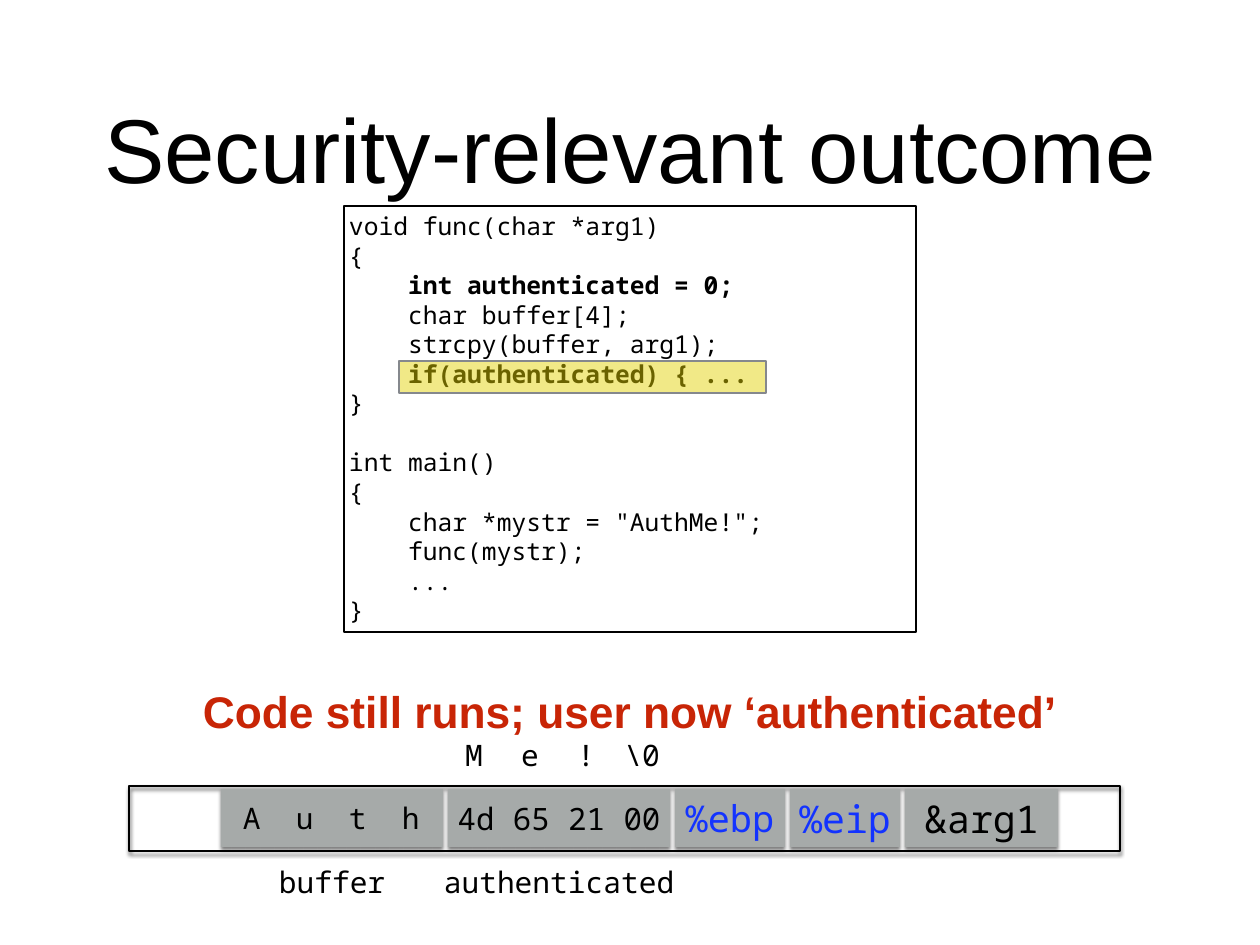
from lxml.etree import SubElement
from pptx import Presentation
from pptx.dml.color import RGBColor
from pptx.enum.shapes import MSO_SHAPE
from pptx.enum.text import MSO_ANCHOR, PP_ALIGN
from pptx.oxml.ns import qn
from pptx.util import Pt

PX = 10320
BLACK = RGBColor(0x00, 0x00, 0x00)
GREY = RGBColor(0xA6, 0xAA, 0xA9)
EDGE = RGBColor(0x85, 0x88, 0x8D)
BLUE = RGBColor(0x13, 0x33, 0xFF)
RED = RGBColor(0xC8, 0x25, 0x06)
YELLOW = RGBColor(0xE3, 0xD1, 0x01)
MONO = "Noto Sans Mono"

CODE = """void func(char *arg1)
{
    int authenticated = 0;
    char buffer[4];
    strcpy(buffer, arg1);
    if(authenticated) { ...
}

int main()
{
    char *mystr = "AuthMe!";
    func(mystr);
    ...
}"""

deck = Presentation()
deck.slide_width, deck.slide_height = 1260 * PX, 945 * PX
slide = deck.slides.add_slide(deck.slide_layouts[6])


def write(shape, text, size, font=MONO, color=BLACK, bold=(),
          align=PP_ALIGN.CENTER, anchor=MSO_ANCHOR.MIDDLE, wrap=True):
    """Fill a shape with one paragraph per line; bold holds line numbers."""
    frame = shape.text_frame
    frame.word_wrap = wrap
    frame.vertical_anchor = anchor
    frame.margin_left = frame.margin_right = 5 * PX
    frame.margin_top = frame.margin_bottom = 5 * PX
    for i, line in enumerate(text.split("\n")):
        par = frame.add_paragraph() if i else frame.paragraphs[0]
        par.alignment = align
        run = par.add_run()
        run.text = line
        run.font.name = font
        run.font.size = Pt(size)
        run.font.bold = i in bold
        run.font.color.rgb = color


def rect(x, y, w, h, fill=None, line=None, shadow=False):
    shape = slide.shapes.add_shape(
        MSO_SHAPE.RECTANGLE, x * PX, y * PX, w * PX, h * PX)
    shape.shadow.inherit = False
    if fill is None:
        shape.fill.background()
    else:
        shape.fill.solid()
        shape.fill.fore_color.rgb = fill
    if line is None:
        shape.line.fill.background()
    else:
        shape.line.color.rgb = line
        shape.line.width = Pt(2)
    if shadow:
        effects = shape.element.spPr.find(qn("a:effectLst"))
        cast = SubElement(effects, qn("a:outerShdw"), blurRad=str(Pt(3)),
                          dist=str(Pt(2)), dir="5400000", rotWithShape="0")
        tint = SubElement(cast, qn("a:srgbClr"), val=str(BLACK))
        SubElement(tint, qn("a:alpha"), val="50000")
    return shape


title = slide.shapes.add_textbox(92 * PX, 43 * PX, 1076 * PX, 209 * PX)
write(title, "Security-relevant outcome", 73.6, font="Arial")

code = rect(344, 206, 572, 426, line=BLACK)
write(code, CODE, 20, bold=(2, 5), align=PP_ALIGN.LEFT, anchor=MSO_ANCHOR.TOP)

# Stack memory: cells from left to right, with names below
rect(129, 786, 991, 65, line=BLACK, shadow=True)
left = 221
for text, width, size, color, name in (
    ("A\tu\tt\th", 222, 24, BLACK, "buffer"),
    ("4d 65 21 00", 222, 25, BLACK, "authenticated"),
    ("%ebp", 110, 30, BLUE, None),
    ("%eip", 110, 31, BLUE, None),
    ("&arg1", 153, 31, BLACK, None),
):
    cell = rect(left, 789, width, 58, fill=GREY, shadow=True)
    tabbed = "\t" in text
    write(cell, text, size, color=color,
          align=PP_ALIGN.LEFT if tabbed else PP_ALIGN.CENTER)
    if tabbed:
        cell.text_frame.margin_left = 22 * PX
        props = cell.text_frame.paragraphs[0]._p.get_or_add_pPr()
        stops = SubElement(props, qn("a:tabLst"))
        for n in range(1, 4):
            SubElement(stops, qn("a:tab"), pos=str(n * 53 * PX), algn="l")
    if name:
        label = slide.shapes.add_textbox(
            (left - 10) * PX, 859 * PX, (width + 20) * PX, 45 * PX)
        write(label, name, 24, wrap=False)
    left += width + 5

# Characters above the bytes they stand for
for i, char in enumerate(("M", "e", "!", "\\0")):
    label = slide.shapes.add_textbox(
        (446 + 56 * i) * PX, 732 * PX, 56 * PX, 45 * PX)
    write(label, char, 24, wrap=False)

claim = slide.shapes.add_textbox(197 * PX, 679 * PX, 866 * PX, 63 * PX)
write(claim, "Code still runs; user now ‘authenticated’", 36, font="Arial",
      color=RED, bold=(0,), wrap=False)

mark = rect(399, 361, 367, 32, fill=YELLOW, line=EDGE)
tint = mark.element.spPr.find(qn("a:solidFill"))[0]
SubElement(tint, qn("a:alpha"), val="47000")

deck.save("out.pptx")
